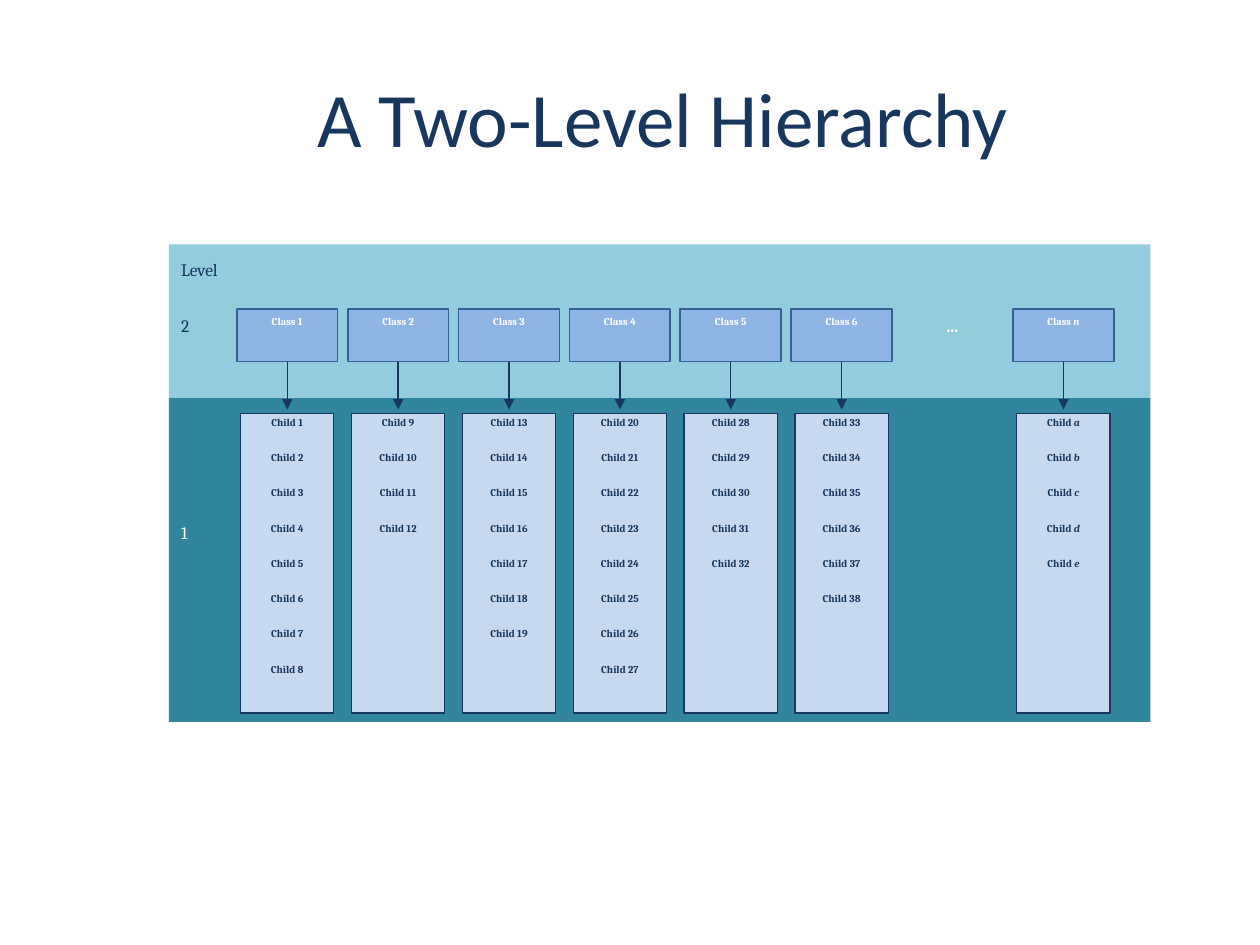
"""Build a slide showing a two-level hierarchy of classes and their children."""
from lxml import etree
from pptx import Presentation
from pptx.dml.color import RGBColor
from pptx.enum.shapes import MSO_CONNECTOR, MSO_SHAPE
from pptx.enum.text import MSO_ANCHOR, PP_ALIGN
from pptx.oxml.ns import qn
from pptx.util import Inches, Pt

TITLE = "A Two-Level Hierarchy"
CLASSES = [
    ("1", range(1, 9)),
    ("2", range(9, 13)),
    ("3", range(13, 20)),
    ("4", range(20, 28)),
    ("5", range(28, 33)),
    ("6", range(33, 39)),
    ("...", ()),
    ("n", "abcde"),
]
LEVELS = [
    ("Level", (1.34, 2.01, 0.94, 0.44), "text"),
    ("2", (1.34, 2.45, 0.4, 0.48), "text"),
    ("1", (1.34, 4.09, 0.4, 0.48), "white"),
]
BANDS = [
    ((1.34, 1.94, 7.79, 1.22), "upper"),
    ((1.34, 3.16, 7.79, 2.57), "lower"),
]
COLORS = {
    "title": "17375E",
    "text": "17365D",
    "white": "FFFFFF",
    "upper": "93CDDD",
    "lower": "31859C",
    "class": "8EB4E3",
    "class_line": "376092",
    "column": "C6D9F1",
}
CLASS_TEXT = {"size": Pt(6), "name": "Cambria", "bold": True}
ELLIPSIS_TEXT = {**CLASS_TEXT, "size": Pt(10)}
LEVEL_TEXT = {"size": Pt(10), "name": "Cambria"}
TITLE_TEXT = {"size": Pt(44), "name": "Calibri"}

FIRST_LEFT, PITCH, CLASS_WIDTH = 1.88, 0.88, 0.8
CLASS_TOP, CLASS_HEIGHT = 2.45, 0.42
COLUMN_TOP, COLUMN_HEIGHT, COLUMN_INSET = 3.28, 2.38, 0.03
CHILD_TOP, CHILD_PITCH, CHILD_HEIGHT = 3.25, 0.28, 0.31


def color(name):
    return RGBColor.from_string(COLORS[name])


def write(shape, runs, text_color, formats, align=PP_ALIGN.CENTER, anchor=MSO_ANCHOR.TOP):
    frame = shape.text_frame
    frame.word_wrap = True
    frame.vertical_anchor = anchor
    paragraph = frame.paragraphs[0]
    paragraph.alignment = align
    for text in runs:
        run = paragraph.add_run()
        run.text = text
        for key, value in formats.items():
            setattr(run.font, key, value)
        run.font.color.rgb = color(text_color)
        if len(runs) > 1:
            run.font.italic = text == runs[-1]


def add_box(slide, kind, place, fill=None, line=None, width=1):
    box = slide.shapes.add_shape(kind, *map(Inches, place))
    box.shadow.inherit = False
    if fill:
        box.fill.solid()
        box.fill.fore_color.rgb = color(fill)
    else:
        box.fill.background()
    if line:
        box.line.color.rgb = color(line)
        box.line.width = Pt(width)
    else:
        box.line.fill.background()
    return box


def add_arrow(slide, x, top, bottom):
    arrow = slide.shapes.add_connector(
        MSO_CONNECTOR.STRAIGHT, *map(Inches, (x, top, x, bottom)))
    arrow.line.color.rgb = color("title")
    arrow.line.width = Pt(0.75)
    etree.SubElement(arrow.line._get_or_add_ln(), qn("a:tailEnd"), type="triangle")
    etree.SubElement(arrow._element.spPr, qn("a:effectLst"))


def label(word, key):
    return [f"{word} ", key] if key.isalpha() else [f"{word} {key}"]


def add_class(slide, left, key, children):
    place = (left, CLASS_TOP, CLASS_WIDTH, CLASS_HEIGHT)
    if not children:
        ellipsis = add_box(slide, MSO_SHAPE.FLOWCHART_PROCESS, place)
        write(ellipsis, [key], "white", ELLIPSIS_TEXT)
        return
    heading = add_box(slide, MSO_SHAPE.FLOWCHART_PROCESS, place, "class", "class_line")
    write(heading, label("Class", key), "white", CLASS_TEXT)
    column = (left + COLUMN_INSET, COLUMN_TOP, CLASS_WIDTH - 2 * COLUMN_INSET, COLUMN_HEIGHT)
    add_box(slide, MSO_SHAPE.RECTANGLE, column, "column", "title", 0.75)
    for row, child in enumerate(children):
        child_place = (left, CHILD_TOP + row * CHILD_PITCH, CLASS_WIDTH, CHILD_HEIGHT)
        entry = add_box(slide, MSO_SHAPE.FLOWCHART_PROCESS, child_place)
        write(entry, label("Child", str(child)), "text", CLASS_TEXT)
    add_arrow(slide, left + CLASS_WIDTH / 2, CLASS_TOP + CLASS_HEIGHT, CHILD_TOP)


def main():
    deck = Presentation()
    deck.slide_width, deck.slide_height = Inches(10), Inches(7.5)
    slide = deck.slides.add_slide(deck.slide_layouts[6])
    title = slide.shapes.add_textbox(*map(Inches, (1.02, 0.3, 8.48, 1.25)))
    write(title, [TITLE], "title", TITLE_TEXT, anchor=MSO_ANCHOR.MIDDLE)
    for place, fill in BANDS:
        add_box(slide, MSO_SHAPE.RECTANGLE, place, fill)
    for index, (key, children) in enumerate(CLASSES):
        add_class(slide, FIRST_LEFT + index * PITCH, key, children)
    for text, place, text_color in LEVELS:
        level = slide.shapes.add_textbox(*map(Inches, place))
        write(level, [text], text_color, LEVEL_TEXT, PP_ALIGN.JUSTIFY)
    deck.save("out.pptx")


if __name__ == "__main__":
    main()
